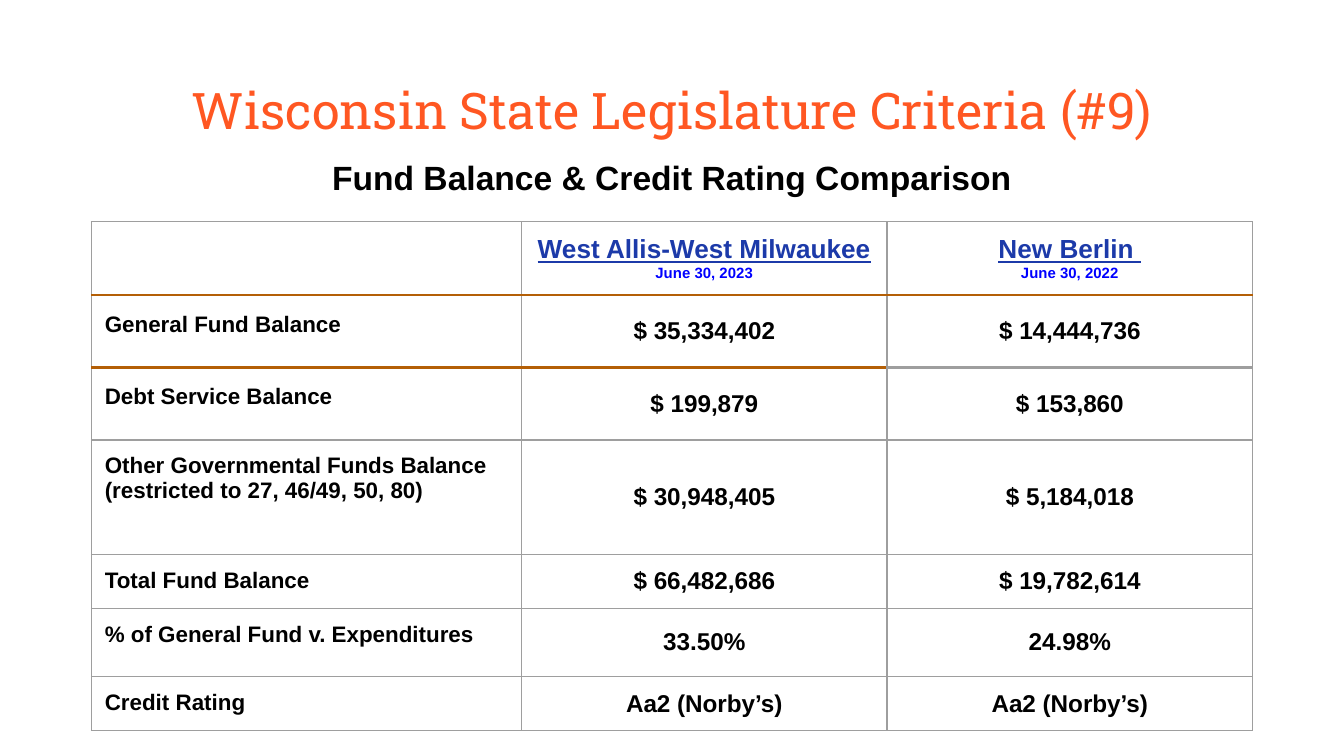
from lxml import etree
from pptx import Presentation
from pptx.dml.color import RGBColor
from pptx.enum.text import MSO_ANCHOR, MSO_AUTO_SIZE, PP_ALIGN
from pptx.oxml.ns import qn
from pptx.util import Inches, Pt

TOP, MIDDLE = MSO_ANCHOR.TOP, MSO_ANCHOR.MIDDLE
LEFT, CENTER = PP_ALIGN.LEFT, PP_ALIGN.CENTER
NO_AUTOFIT = MSO_AUTO_SIZE.NONE

BLACK, ORANGE, GRAY, RUST = "000000", "FF5722", "9E9E9E", "B45F06"
LINK, DATE = "1C3AA9", "0000FF"

DISTRICTS = [("West Allis-West Milwaukee", "June 30, 2023"), ("New Berlin ", "June 30, 2022")]
BALANCES = [
    (["General Fund Balance"], "$ 35,334,402", "$ 14,444,736"),
    (["Debt Service Balance"], "$ 199,879", "$ 153,860"),
    (["Other Governmental Funds Balance", "(restricted to 27, 46/49, 50, 80)"],
     "$ 30,948,405", "$ 5,184,018"),
    (["Total Fund Balance"], "$ 66,482,686", "$ 19,782,614"),
    (["% of General Fund v. Expenditures"], "33.50%", "24.98%"),
    (["Credit Rating"], "Aa2 (Norby’s)", "Aa2 (Norby’s)"),
]
COLUMN_WIDTHS = [3.2, 2.72, 2.72]
ROW_HEIGHTS = [0.48, 0.54, 0.54, 0.85, 0.36, 0.51, 0.36]
SPACED_ROWS = (1, 2)


def rgb(value):
    """Turn a hex string into a colour."""
    return RGBColor.from_string(value)


class SlideBuilder:
    """Hold the style and the current slide."""

    font = "Arial"
    title_font = "Roboto Slab"
    inset = Inches(0.1)

    def __init__(self, presentation):
        """Add a title and content slide with a white background."""
        self.slide = presentation.slides.add_slide(presentation.slide_layouts[1])
        self.slide.background.fill.solid()
        self.slide.background.fill.fore_color.rgb = rgb("FFFFFF")

    def run(self, paragraph, text, size, color=BLACK, bold=True, underline=False, font=None):
        """Add one formatted run."""
        run = paragraph.add_run()
        run.text = text
        run.font.name = font or self.font
        run.font.size = Pt(size)
        run.font.bold = bold
        run.font.underline = underline
        run.font.color.rgb = rgb(color)

    def placeholder(self, index, box, text, size, color, bold, font, spacing):
        """Place and fill a template placeholder with one centred line."""
        shape = self.slide.placeholders[index]
        shape.left, shape.top, shape.width, shape.height = map(Inches, box)
        frame = shape.text_frame
        frame.auto_size = NO_AUTOFIT
        frame.word_wrap = True
        frame.vertical_anchor = TOP
        frame.margin_left = frame.margin_right = self.inset
        frame.margin_top = frame.margin_bottom = self.inset
        paragraph = frame.paragraphs[0]
        paragraph.alignment = CENTER
        paragraph.line_spacing = spacing
        paragraph.space_before = Pt(0)
        properties = paragraph._p.get_or_add_pPr()
        properties.set("marL", "0")
        properties.set("indent", "0")
        etree.SubElement(properties, qn("a:buNone"))
        self.run(paragraph, text, size, color, bold, font=font)

    def cell(self, cell, lines, alignment, anchor, spacing=1.0, after=0):
        """Fill a cell with lines given as (text, size, color, underline)."""
        cell.vertical_anchor = anchor
        cell.margin_left = cell.margin_right = self.inset
        cell.margin_top = cell.margin_bottom = self.inset
        frame = cell.text_frame
        for number, (text, size, color, underline) in enumerate(lines):
            paragraph = frame.add_paragraph() if number else frame.paragraphs[0]
            paragraph.alignment = alignment
            paragraph.line_spacing = spacing
            paragraph.space_after = Pt(after)
            self.run(paragraph, text, size, color, underline=underline)

    def borders(self, cell, top, bottom):
        """Draw the four borders of an unfilled cell."""
        properties = cell._tc.get_or_add_tcPr()
        side = (GRAY, 0.75)
        for tag, (color, width) in (("a:lnL", side), ("a:lnR", side),
                                    ("a:lnT", top), ("a:lnB", bottom)):
            line = etree.SubElement(properties, qn(tag), w=str(Pt(width)))
            fill = etree.SubElement(line, qn("a:solidFill"))
            etree.SubElement(fill, qn("a:srgbClr"), val=color)
        cell.fill.background()

    def rule(self, row, column):
        """Give the colour and width of the line below a row."""
        if row == 0 or (row == 1 and column < 2):
            return RUST, 1.5
        return GRAY, 1.5 if row == 1 else 0.75

    def table(self, left, top):
        """Add the comparison table."""
        shape = self.slide.shapes.add_table(
            len(ROW_HEIGHTS), len(COLUMN_WIDTHS), Inches(left), Inches(top),
            Inches(sum(COLUMN_WIDTHS)), Inches(sum(ROW_HEIGHTS)))
        table = shape.table
        table.first_row = table.horz_banding = False
        for column, width in zip(table.columns, COLUMN_WIDTHS):
            column.width = Inches(width)
        for row, height in zip(table.rows, ROW_HEIGHTS):
            row.height = Inches(height)
        for column, (name, date) in enumerate(DISTRICTS, 1):
            heading = [(name, 14, LINK, True), (date, 8, DATE, False)]
            self.cell(table.cell(0, column), heading, CENTER, TOP)
        for row, (labels, *values) in enumerate(BALANCES, 1):
            spacing, after = (1.15, 12) if row in SPACED_ROWS else (1.0, 0)
            lines = [(label, 12, BLACK, False) for label in labels]
            self.cell(table.cell(row, 0), lines, LEFT, TOP, spacing, after)
            for column, value in enumerate(values, 1):
                self.cell(table.cell(row, column), [(value, 13, BLACK, False)], CENTER, MIDDLE)
        for row in range(len(ROW_HEIGHTS)):
            for column in range(len(COLUMN_WIDTHS)):
                self.borders(table.cell(row, column),
                             self.rule(row - 1, column), self.rule(row, column))


def main():
    """Build and save the slide."""
    presentation = Presentation()
    presentation.slide_width = Inches(10)
    presentation.slide_height = Inches(10) * 9 // 16
    builder = SlideBuilder(presentation)
    builder.placeholder(0, (0.34, 0.49, 9.32, 0.63), "Wisconsin State Legislature Criteria (#9)",
                        27, ORANGE, False, builder.title_font, 1.0)
    builder.placeholder(1, (0.34, 1.09, 9.32, 0.39), "Fund Balance & Credit Rating Comparison",
                        18, BLACK, True, builder.font, 0.95)
    builder.table(0.68, 1.65)
    presentation.save("out.pptx")


if __name__ == "__main__":
    main()
